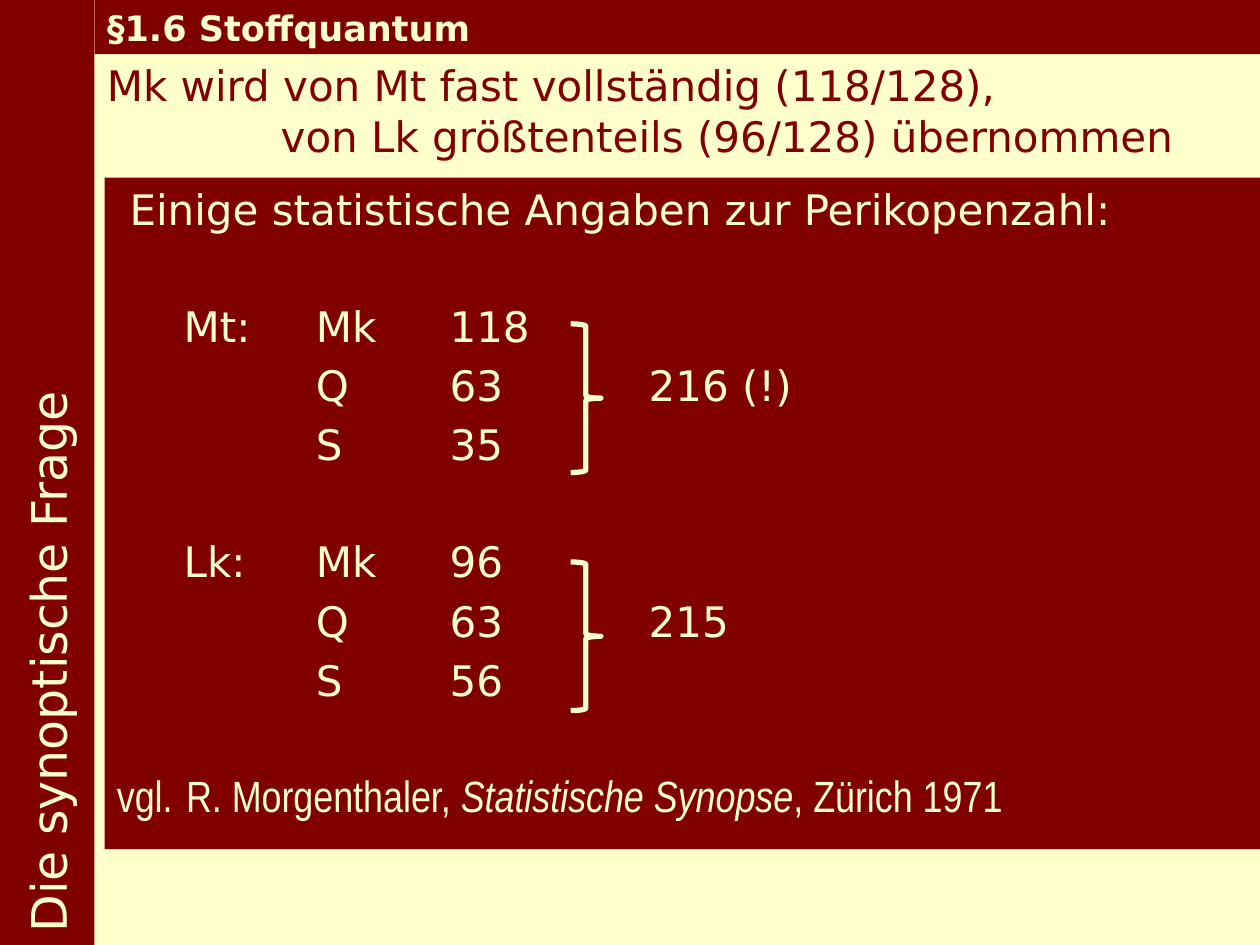
from pptx import Presentation
from pptx.dml.color import RGBColor
from pptx.enum.shapes import MSO_SHAPE
from pptx.enum.text import MSO_ANCHOR, MSO_AUTO_SIZE, PP_ALIGN
from pptx.util import Inches, Pt
from lxml.etree import SubElement
from pptx.oxml.ns import qn

HUES = {"red": "800000", "cream": "FFFFCC"}
SANS = "DejaVu Sans"
SLIM = "Arial Narrow"
STOPS = (0.53, 1.58, 2.64, 4.22)
GROUPS = (
    ("\tMt:\tMk\t118", "\t\tQ\t63\t216 (!)", "\t\tS\t35"),
    ("\tLk:\tMk\t96", "\t\tQ\t63\t215", "\t\tS\t56"),
)
SOURCE = (
    ("vgl.", SLIM, 25, False),
    (" ", SANS, 24, False),
    ("R. Morgenthaler, ", SLIM, 25, False),
    ("Statistische Synopse", SLIM, 25, True),
    (", Zürich 1971", SLIM, 25, False),
)


def hue(name):
    return RGBColor.from_string(HUES[name])


def place(shape, left, top, width, height):
    shape.left, shape.top = Inches(left), Inches(top)
    shape.width, shape.height = Inches(width), Inches(height)


def paint(shape, name):
    shape.fill.solid()
    shape.fill.fore_color.rgb = hue(name)


def set_frame(shape, anchor):
    frame = shape.text_frame
    frame.word_wrap = True
    frame.auto_size = MSO_AUTO_SIZE.NONE
    frame.vertical_anchor = anchor
    return frame


def style(para, size, color, before=0, indent=0):
    para.alignment = PP_ALIGN.LEFT
    para.space_before = Pt(before)
    para.font.name = SANS
    para.font.size = Pt(size)
    para.font.color.rgb = hue(color)
    if indent:
        para._p.get_or_add_pPr().set("marL", str(Inches(indent)))


def add_line(frame, text, before):
    para = frame.add_paragraph()
    para.text = text
    style(para, 24, "cream", before)
    return para


def add_tabs(para):
    props = para._p.get_or_add_pPr()
    tabs = SubElement(props, qn("a:tabLst"))
    for stop in STOPS:
        SubElement(tabs, qn("a:tab"), pos=str(Inches(stop)), algn="l")
    props.insert_element_before(tabs, "a:defRPr", "a:extLst")


def add_block(slide, left, top, width, height):
    block = slide.shapes.add_shape(MSO_SHAPE.RECTANGLE, 0, 0, 0, 0)
    place(block, left, top, width, height)
    block.shadow.inherit = False
    block.line.fill.background()
    paint(block, "red")
    return block


def add_title(slide):
    title = slide.shapes.title
    place(title, 0.75, 0, 9.25, 0.43)
    paint(title, "red")
    frame = set_frame(title, MSO_ANCHOR.MIDDLE)
    frame.text = "§1.6 Stoffquantum"
    style(frame.paragraphs[0], 20, "cream")
    frame.paragraphs[0].font.bold = True


def add_side(slide):
    frame = set_frame(add_block(slide, 0, 0, 0.75, 7.5), MSO_ANCHOR.MIDDLE)
    frame._txBody.bodyPr.set("vert", "vert270")
    frame.text = "Die synoptische Frage"
    style(frame.paragraphs[0], 28, "cream")


def add_thesis(slide):
    box = slide.shapes.add_textbox(
        Inches(0.75), Inches(0.42), Inches(9), Inches(0.9))
    frame = set_frame(box, MSO_ANCHOR.TOP)
    frame.text = ("Mk wird von Mt fast vollständig (118/128),\n"
                  "von Lk größtenteils (96/128) übernommen")
    first, second = frame.paragraphs
    style(first, 24, "red")
    style(second, 24, "red", 0.5, 1.38)


def add_panel(slide):
    frame = set_frame(add_block(slide, 0.83, 1.41, 9.17, 5.33), MSO_ANCHOR.TOP)
    frame.text = "Einige statistische Angaben zur Perikopenzahl:"
    style(frame.paragraphs[0], 24, "cream", 0, 0.1)
    for group in GROUPS:
        for row, text in enumerate(group):
            add_tabs(add_line(frame, text, 5 if row else 38))
    para = add_line(frame, "", 36.5)
    for text, face, size, slant in SOURCE:
        run = para.add_run()
        run.text = text
        run.font.name = face
        run.font.size = Pt(size)
        run.font.italic = slant
        run.font.color.rgb = hue("cream")


def add_brace(slide, top):
    brace = slide.shapes.add_shape(MSO_SHAPE.RIGHT_BRACE, 0, 0, 0, 0)
    place(brace, 4.53, top, 0.24, 1.18)
    brace.shadow.inherit = False
    brace.fill.background()
    brace.line.color.rgb = hue("cream")
    brace.line.width = Pt(3)


def main():
    deck = Presentation()
    deck.slide_width, deck.slide_height = Inches(10), Inches(7.5)
    slide = deck.slides.add_slide(deck.slide_layouts[5])
    paint(slide.background, "cream")
    add_title(slide)
    add_thesis(slide)
    add_side(slide)
    add_panel(slide)
    for top in (2.57, 4.46):
        add_brace(slide, top)
    deck.save("out.pptx")


if __name__ == "__main__":
    main()
